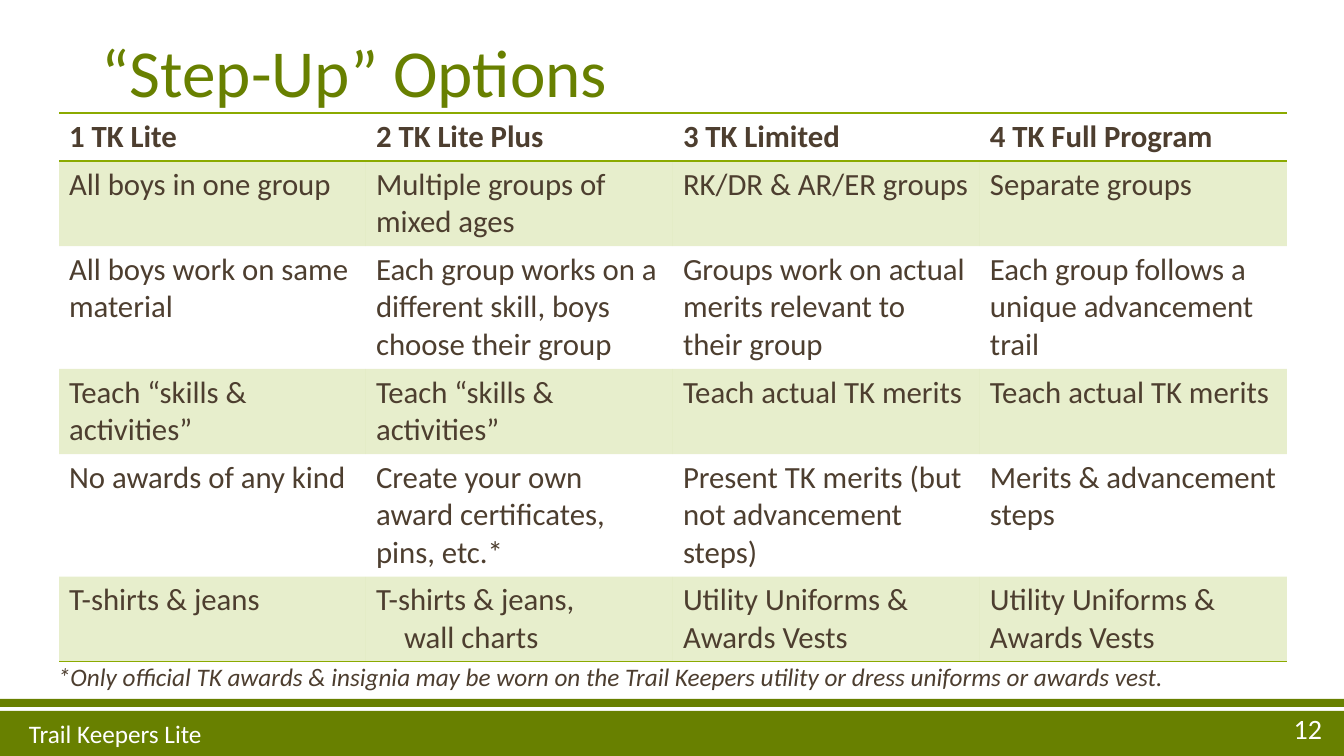
"""Build the slide that compares the four step-up options in a table."""
from dataclasses import dataclass

import lxml.etree
import pptx
import pptx.dml.color
import pptx.enum.shapes
import pptx.enum.text
import pptx.oxml.ns
import pptx.util

EMU_PER_PX = 914400 / 100.8
FONT = "Calibri"
COLOURS = {"green": "688000", "lime": "8BAA00", "brown": "4D3E2F", "white": "FFFFFF"}
PLAIN_TABLE_STYLE = "{2D5ABB26-0587-4C30-8999-92F81FD0307C}"
BAND_ALPHA = 20000
WALL_CHARTS_INDENT = 28

ANCHOR = pptx.enum.text.MSO_ANCHOR
ALIGN = pptx.enum.text.PP_ALIGN

TABLE_LEFT, TABLE_TOP, COLUMN_WIDTH = 59, 113, 307
ROW_HEIGHTS = [48, 85, 123, 85, 122, 85]
OPTIONS = [
    ["1 TK Lite", "2 TK Lite Plus", "3 TK Limited", "4 TK Full Program"],
    ["All boys in one group", "Multiple groups of mixed ages",
     "RK/DR & AR/ER groups", "Separate groups"],
    ["All boys work on same material",
     "Each group works on a different skill, boys choose their group",
     "Groups work on actual merits relevant to their group",
     "Each group follows a unique advancement trail"],
    ["Teach “skills & activities”", "Teach “skills & activities”",
     "Teach actual TK merits", "Teach actual TK merits"],
    ["No awards of any kind", "Create your own award certificates, pins, etc.*",
     "Present TK merits (but not advancement steps)", "Merits & advancement steps"],
    ["T-shirts & jeans", "T-shirts & jeans,\nwall charts",
     "Utility Uniforms & Awards Vests", "Utility Uniforms & Awards Vests"],
]


@dataclass(frozen=True)
class Bar:
    top: int
    height: int


@dataclass(frozen=True)
class Label:
    text: str
    left: int
    top: int
    width: int
    height: int
    size: int
    colour: str
    anchor: ANCHOR = ANCHOR.MIDDLE
    align: ALIGN = ALIGN.LEFT
    italic: bool = False


BARS = [Bar(711, 45), Bar(699, 8)]
LABELS = [
    Label("12", 1242, 706, 90, 45, 20, "white", align=ALIGN.RIGHT),
    Label("Trail Keepers Lite", 19, 711, 871, 45, 18, "white"),
    Label("“Step-Up” Options", 92, 13, 1150, 103, 48, "green", anchor=ANCHOR.BOTTOM),
    Label("*Only official TK awards & insignia may be worn on the Trail Keepers "
          "utility or dress uniforms or awards vest.",
          48, 656, 1246, 40, 18, "brown", anchor=ANCHOR.TOP, italic=True),
]


def px(length: int) -> pptx.util.Emu:
    """Convert px to EMU."""
    return pptx.util.Emu(round(length * EMU_PER_PX))


def rgb(colour: str) -> pptx.dml.color.RGBColor:
    """Look up a named colour."""
    return pptx.dml.color.RGBColor.from_string(COLOURS[colour])


def style_text(frame, size: int, colour: str, bold: bool = False,
               italic: bool = False) -> None:
    """Format every run of a text frame."""
    for para in frame.paragraphs:
        for span in para.runs:
            span.font.name = FONT
            span.font.size = pptx.util.Pt(size)
            span.font.bold = bold
            span.font.italic = italic
            span.font.color.rgb = rgb(colour)


def draw_bar(page, bar: Bar, width: int) -> None:
    """Draw one full-width footer bar."""
    shape = page.shapes.add_shape(pptx.enum.shapes.MSO_SHAPE.RECTANGLE,
                                  0, px(bar.top), width, px(bar.height))
    shape.shadow.inherit = False
    shape.fill.solid()
    shape.fill.fore_color.rgb = rgb("green")
    shape.line.fill.background()


def draw_label(page, label: Label) -> None:
    """Draw one text box."""
    box = page.shapes.add_textbox(px(label.left), px(label.top),
                                  px(label.width), px(label.height))
    frame = box.text_frame
    frame.word_wrap = True
    frame.vertical_anchor = label.anchor
    frame.text = label.text
    frame.paragraphs[0].alignment = label.align
    style_text(frame, label.size, label.colour, italic=label.italic)


def add_alpha(fill_element) -> None:
    """Make a solid cell fill translucent."""
    colour = fill_element.find(".//" + pptx.oxml.ns.qn("a:srgbClr"))
    alpha = lxml.etree.SubElement(colour, pptx.oxml.ns.qn("a:alpha"))
    alpha.set("val", str(BAND_ALPHA))


def add_border(properties, side: str) -> None:
    """Put a thin lime line on one side of a cell."""
    qn = pptx.oxml.ns.qn
    line = lxml.etree.Element(qn(f"a:{side}"), w=str(pptx.util.Pt(1)))
    fill = lxml.etree.SubElement(line, qn("a:solidFill"))
    lxml.etree.SubElement(fill, qn("a:srgbClr"), val=COLOURS["lime"])
    properties.insert(0, line)


def fill_cell(cell, text: str, row: int) -> None:
    """Write and style one table cell."""
    cell.text_frame.text = text
    style_text(cell.text_frame, 22, "brown", bold=row == 0)
    for para in cell.text_frame.paragraphs[1:]:
        para._p.get_or_add_pPr().set("marL", str(px(WALL_CHARTS_INDENT)))
    properties = cell._tc.get_or_add_tcPr()
    if row % 2:
        cell.fill.solid()
        cell.fill.fore_color.rgb = rgb("lime")
        add_alpha(properties)
    else:
        cell.fill.background()
    if row in (0, len(OPTIONS) - 1):
        add_border(properties, "lnB")
    if row == 0:
        add_border(properties, "lnT")


def draw_table(page) -> None:
    """Draw the table of options."""
    columns = len(OPTIONS[0])
    frame = page.shapes.add_table(len(OPTIONS), columns, px(TABLE_LEFT), px(TABLE_TOP),
                                  px(COLUMN_WIDTH * columns), px(sum(ROW_HEIGHTS)))
    table = frame.table
    table.horz_banding = False
    table._tbl.tblPr.find(pptx.oxml.ns.qn("a:tableStyleId")).text = PLAIN_TABLE_STYLE
    for column in table.columns:
        column.width = px(COLUMN_WIDTH)
    for row, (height, texts) in enumerate(zip(ROW_HEIGHTS, OPTIONS)):
        table.rows[row].height = px(height)
        for column, text in enumerate(texts):
            fill_cell(table.cell(row, column), text, row)


def main() -> None:
    """Build and save the deck."""
    deck = pptx.Presentation()
    deck.slide_width, deck.slide_height = px(1344), px(756)
    page = deck.slides.add_slide(deck.slide_layouts[6])
    for bar in BARS:
        draw_bar(page, bar, deck.slide_width)
    draw_table(page)
    for label in LABELS:
        draw_label(page, label)
    deck.save("out.pptx")


if __name__ == "__main__":
    main()
